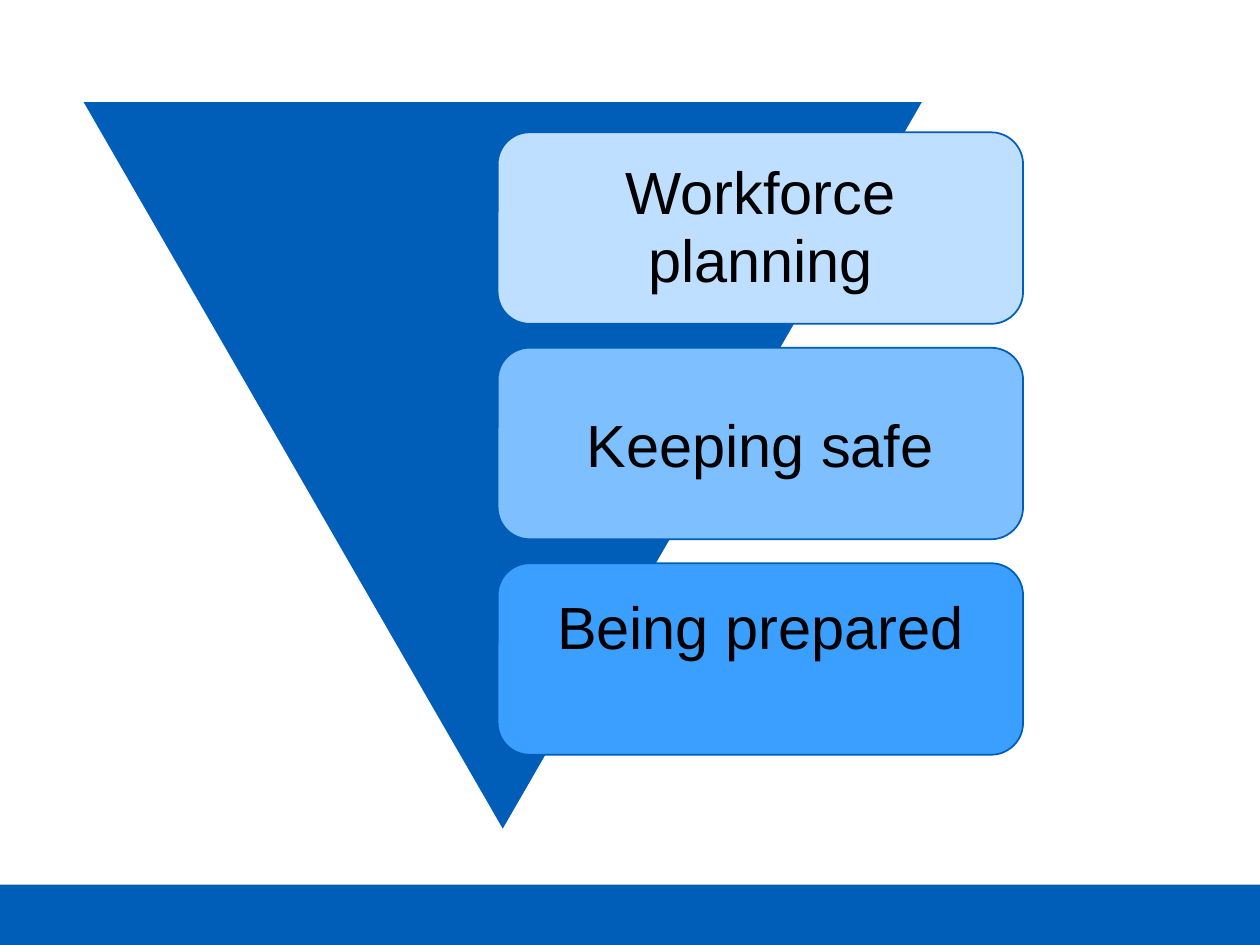
from pptx import Presentation
from pptx import util as u
from pptx.dml.color import RGBColor
from pptx.enum import shapes, text

COLOURS = {
    "blue": "005EB8",
    "white": "FFFFFF",
    "black": "000000",
    "pale": "BEDFFF",
    "light": "7DBFFF",
    "bright": "3B9FFF",
}
WIDTH, HEIGHT = 10, 7.5
ANCHOR = text.MSO_ANCHOR
KIND = shapes.MSO_SHAPE


def colour(name):
    return RGBColor.from_string(COLOURS[name])


def write(shape, wording, *, size=34, ink="black", font="Arial", anchor=ANCHOR.MIDDLE,
          spacing=1.0, inset=0.14):
    """Put centred, wrapped text in a shape."""
    frame = shape.text_frame
    frame.word_wrap = True
    frame.vertical_anchor = anchor
    frame.margin_left = frame.margin_right = u.Inches(inset)
    frame.margin_top = frame.margin_bottom = u.Inches(inset)
    paragraph = frame.paragraphs[0]
    paragraph.alignment = text.PP_ALIGN.CENTER
    paragraph.line_spacing = spacing
    run = paragraph.add_run()
    run.text = wording
    run.font.name = font
    run.font.size = u.Pt(size)
    run.font.color.rgb = colour(ink)


class Deck:
    """Style and current slide; places are shares of the slide's size."""

    def __init__(self):
        self.presentation = Presentation()
        self.presentation.slide_width = u.Inches(WIDTH)
        self.presentation.slide_height = u.Inches(HEIGHT)
        self.slide = self.presentation.slides.add_slide(self.presentation.slide_layouts[6])

    def block(self, kind, left, top, width, height, fill, line=None):
        across, down = self.presentation.slide_width, self.presentation.slide_height
        shape = self.slide.shapes.add_shape(
            kind, int(left * across), int(top * down), int(width * across), int(height * down))
        shape.shadow.inherit = False
        shape.fill.solid()
        shape.fill.fore_color.rgb = colour(fill)
        if line:
            shape.line.color.rgb = colour(line)
            shape.line.width = u.Pt(1)
        else:
            shape.line.fill.background()
        return shape

    def footer(self, height):
        self.block(KIND.RECTANGLE, 0, 1 - height, 1, height, "blue")

    def funnel(self, left, top, width, height):
        triangle = self.block(KIND.ISOSCELES_TRIANGLE, left, top, width, height, "blue", "white")
        triangle.rotation = 180

    def card(self, row, wording, fill, **style):
        top, pitch, height = 0.14, 0.228, 0.2027
        card = self.block(KIND.ROUNDED_RECTANGLE, 0.395, top + row * pitch, 0.417, height,
                          fill, "blue")
        write(card, wording, **style)


def main():
    deck = Deck()

    # Footer band and downward triangle
    deck.footer(0.064)
    deck.funnel(0.065, 0.107, 0.668, 0.772)

    # Topic cards, one per row
    topics = [
        ("Workforce planning", "pale", {"spacing": 0.95}),
        ("Keeping safe", "light", {}),
        ("Being prepared", "bright", {"anchor": ANCHOR.TOP}),
    ]
    for row, (wording, fill, style) in enumerate(topics):
        deck.card(row, wording, fill, **style)

    deck.presentation.save("out.pptx")


if __name__ == "__main__":
    main()
